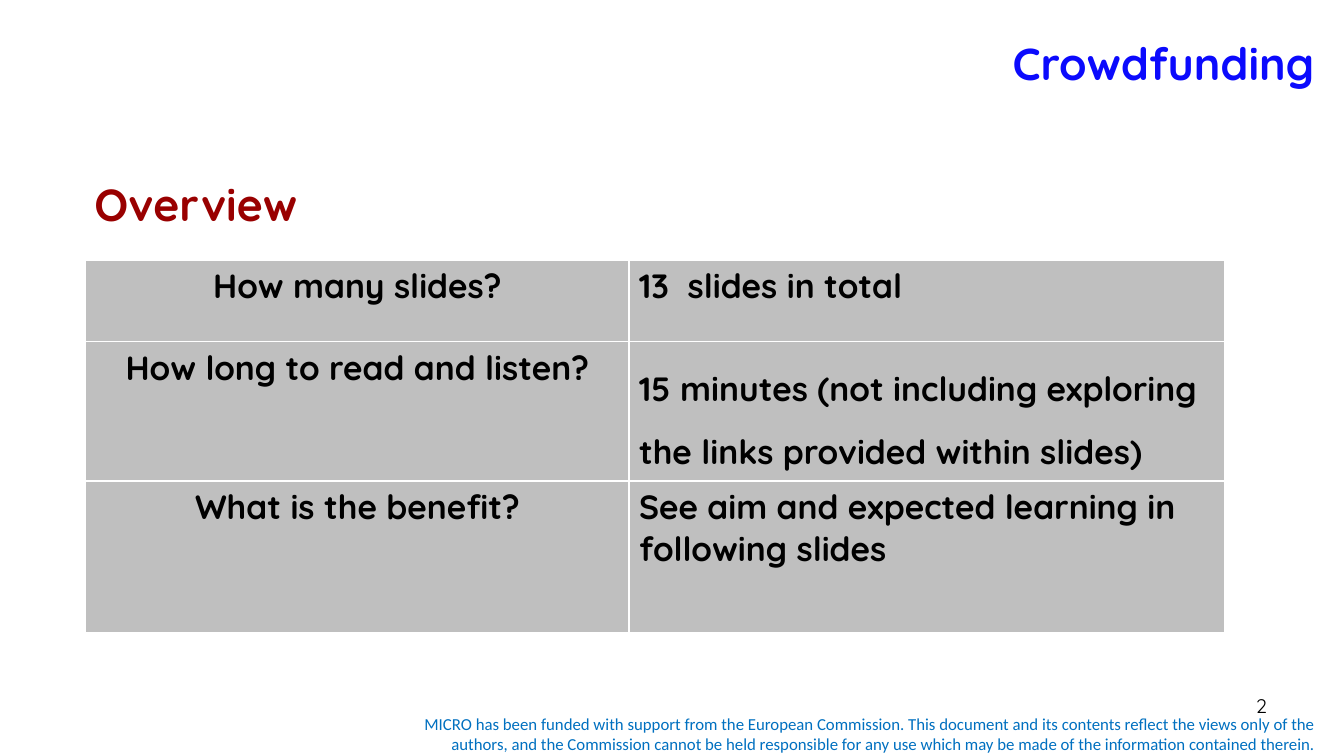
import pptx
import pptx.dml.color
import pptx.enum.text
import pptx.oxml
import pptx.oxml.ns
import pptx.util
from pptx.util import Cm

RGBColor = pptx.dml.color.RGBColor
ALIGN = pptx.enum.text.PP_ALIGN
ANCHOR = pptx.enum.text.MSO_ANCHOR

BLUE = RGBColor(0x0B, 0x0A, 0xFD)
RED = RGBColor(0x99, 0x00, 0x00)
FOOTER_BLUE = RGBColor(0x00, 0x70, 0xC0)
BLACK = RGBColor(0x00, 0x00, 0x00)
GREY = RGBColor(0xBF, 0xBF, 0xBF)
WHITE = RGBColor(0xFF, 0xFF, 0xFF)

HEADING = {"name": "Quicksand", "size": pptx.util.Pt(32), "bold": True}
CELL = {"name": "Quicksand", "size": pptx.util.Pt(24), "bold": True}
NUMBER = {"name": "Quicksand", "size": pptx.util.Pt(14), "bold": False}
FOOTER = {"name": "Calibri", "size": pptx.util.Pt(12), "bold": False}

COLUMN_WIDTHS = (13.69, 15.02)
ROW_HEIGHTS = (2.06, 3.51, 3.82)
# Question, answer, line spacing of the answer
ROWS = (
    ("How many slides?", "13  slides in total", 1.0),
    ("How long to read and listen?",
     "15 minutes (not including exploring the links provided within slides)", 1.5),
    ("What is the benefit?", "See aim and expected learning in following slides", 1.0),
)
DISCLAIMER = (
    "MICRO has been funded with support from the European Commission. "
    "This document and its contents reflect the views only of the authors, "
    "and the Commission cannot be held responsible for any use which may be "
    "made of the information contained therein."
)


def write(tf, text, style, color, align=ALIGN.LEFT, spacing=1.0):
    p = tf.paragraphs[0]
    p.alignment = align
    p.line_spacing = spacing
    r = p.add_run()
    r.text = text
    for key, value in style.items():
        setattr(r.font, key, value)
    r.font.color.rgb = color


def add_text(s, box, text, style, color, align=ALIGN.LEFT, anchor=ANCHOR.TOP):
    tf = s.shapes.add_textbox(*map(Cm, box)).text_frame
    tf.word_wrap = True
    tf.vertical_anchor = anchor
    write(tf, text, style, color, align)


def set_title(s, text):
    sp = s.shapes.title
    sp.left, sp.top, sp.width, sp.height = map(Cm, (2.9, 0, 30.48, 3.18))
    sp.text_frame.vertical_anchor = ANCHOR.MIDDLE
    write(sp.text_frame, text, HEADING, BLUE, ALIGN.RIGHT)


def format_cell(cell):
    # Borders precede the fill in the cell properties
    tc_pr = cell._tc.get_or_add_tcPr()
    for side in ("lnL", "lnR", "lnT", "lnB"):
        tc_pr.append(pptx.oxml.parse_xml(
            f'<a:{side} {pptx.oxml.ns.nsdecls("a")} w="12700"><a:solidFill>'
            f'<a:srgbClr val="{WHITE}"/></a:solidFill></a:{side}>'))
    cell.fill.solid()
    cell.fill.fore_color.rgb = GREY


def add_overview_table(s):
    table = s.shapes.add_table(
        len(ROWS), len(COLUMN_WIDTHS), Cm(2.16), Cm(6.55),
        Cm(sum(COLUMN_WIDTHS)), Cm(sum(ROW_HEIGHTS))).table
    for column, width in zip(table.columns, COLUMN_WIDTHS):
        column.width = Cm(width)
    for row, height, (question, answer, spacing) in zip(table.rows, ROW_HEIGHTS, ROWS):
        row.height = Cm(height)
        left, right = row.cells
        write(left.text_frame, question, CELL, BLACK, ALIGN.CENTER)
        write(right.text_frame, answer, CELL, BLACK, spacing=spacing)
        for cell in (left, right):
            format_cell(cell)


def main():
    prs = pptx.Presentation()
    prs.slide_width, prs.slide_height = Cm(33.87), Cm(19.05)
    s = prs.slides.add_slide(prs.slide_layouts[5])

    # Headings
    set_title(s, "Crowdfunding")
    add_text(s, (2.13, 4.34, 7.37, 1.63), "Overview", HEADING, RED)

    # Overview
    add_overview_table(s)

    # Footer
    add_text(s, (9.53, 17.86, 23.88, 1.27), DISCLAIMER, FOOTER, FOOTER_BLUE,
             ALIGN.RIGHT, ANCHOR.MIDDLE)
    add_text(s, (24.28, 17.35, 7.9, 1.32), "2", NUMBER, BLACK, ALIGN.RIGHT)

    prs.save("out.pptx")


if __name__ == "__main__":
    main()
